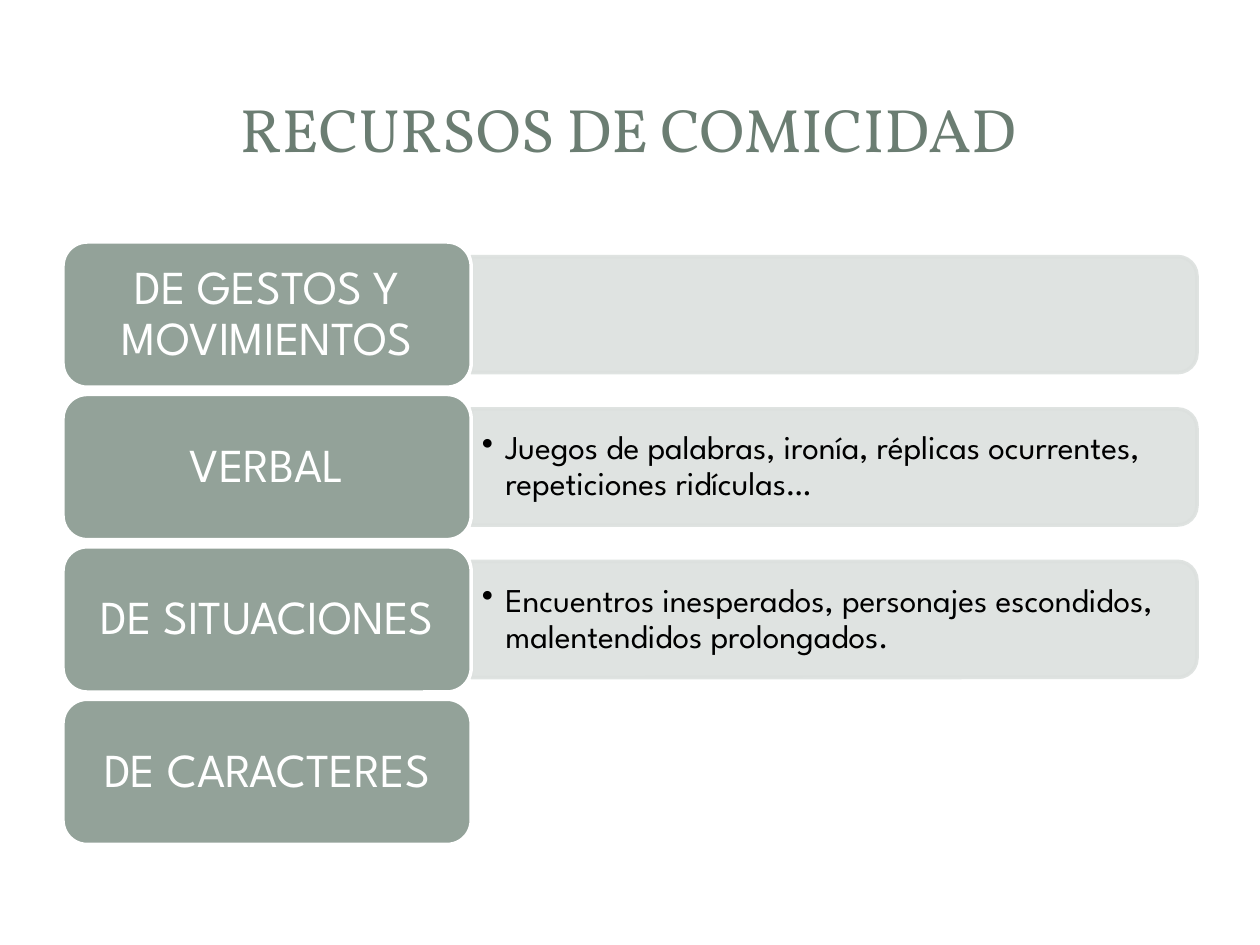
from lxml.etree import SubElement
from pptx import Presentation
from pptx.dml.color import RGBColor
from pptx.enum.shapes import MSO_SHAPE
from pptx.enum.text import MSO_ANCHOR, PP_ALIGN
from pptx.oxml.ns import qn
from pptx.util import Pt

TITLE = "RECURSOS DE COMICIDAD"
RESOURCES = [
    ("DE GESTOS Y MOVIMIENTOS", ""),
    ("VERBAL", "Juegos de palabras, ironía, réplicas ocurrentes, repeticiones ridículas…"),
    ("DE SITUACIONES", "Encuentros inesperados, personajes escondidos, malentendidos prolongados."),
    ("DE CARACTERES", None),
]

WHITE = RGBColor(0xFF, 0xFF, 0xFF)
BLACK = RGBColor(0, 0, 0)
SAGE = RGBColor(0x93, 0xA2, 0x99)
DARK_SAGE = RGBColor(0x6B, 0x7D, 0x72)
PALE = RGBColor(0xDC, 0xE0, 0xDE)

LEFT, TOP, PITCH = 36, 138.3, 87.1
LABEL_WIDTH, LABEL_HEIGHT = 233.3, 83
PANEL_WIDTH, PANEL_HEIGHT = 414.7, 66.4
DETAIL_WIDTH, DETAIL_HEIGHT = 411.5, 60
PANEL_LEFT = LEFT + LABEL_WIDTH

TITLE_FONT = {"name": "Vollkorn", "size": Pt(35)}
LABEL_FONT = {"name": "League Spartan", "size": Pt(27)}
DETAIL_FONT = {"name": "League Spartan", "size": Pt(19)}
LABEL_FRAME = {"margin_left": Pt(12), "margin_right": Pt(12),
               "margin_top": Pt(8), "margin_bottom": Pt(8)}
DETAIL_FRAME = {"margin_left": Pt(6), "margin_right": Pt(6),
                "margin_top": Pt(3), "margin_bottom": Pt(3)}


def assign(target, values):
    for key, value in values.items():
        setattr(target, key, value)


def write(shape, text, font, color, align, frame, spacing=0.9):
    assign(shape.text_frame, {"text": text, "word_wrap": True,
                              "vertical_anchor": MSO_ANCHOR.MIDDLE, **frame})
    paragraph = shape.text_frame.paragraphs[0]
    assign(paragraph, {"alignment": align, "line_spacing": spacing})
    assign(paragraph.runs[0].font, font)
    paragraph.runs[0].font.color.rgb = color
    return paragraph


def add_box(slide, kind, left, top, width, height, fill, line):
    box = slide.shapes.add_shape(kind, Pt(left), Pt(top), Pt(width), Pt(height))
    box.shadow.inherit = False
    box.fill.solid()
    box.fill.fore_color.rgb = fill
    box.line.color.rgb = line
    box.line.width = Pt(2)
    return box


def add_panel(slide, middle):
    panel = add_box(slide, MSO_SHAPE.ROUND_2_SAME_RECTANGLE,
                    PANEL_LEFT + (PANEL_WIDTH - PANEL_HEIGHT) / 2,
                    middle - PANEL_WIDTH / 2, PANEL_HEIGHT, PANEL_WIDTH, PALE, PALE)
    panel.rotation = 90
    for color in panel._element.spPr.iter(qn("a:srgbClr")):
        SubElement(color, qn("a:alpha"), val="90000")


def add_detail(slide, text, middle):
    detail = slide.shapes.add_textbox(Pt(PANEL_LEFT), Pt(middle - DETAIL_HEIGHT / 2),
                                      Pt(DETAIL_WIDTH), Pt(DETAIL_HEIGHT))
    paragraph = write(detail, text, DETAIL_FONT, BLACK, PP_ALIGN.LEFT, DETAIL_FRAME)
    properties = paragraph._p.get_or_add_pPr()
    properties.set("marL", str(Pt(13.5)))
    properties.set("indent", str(Pt(-13.5)))
    SubElement(properties, qn("a:buChar"), char="•")


def main():
    deck = Presentation()
    assign(deck, {"slide_width": Pt(720), "slide_height": Pt(540)})
    slide = deck.slides.add_slide(deck.slide_layouts[5])
    heading = slide.shapes.title
    assign(heading, {"left": Pt(34), "top": Pt(32.4), "width": Pt(650), "height": Pt(82)})
    write(heading, TITLE, TITLE_FONT, DARK_SAGE, PP_ALIGN.CENTER, {}, 1.0)

    for row, (name, detail) in enumerate(RESOURCES):
        top = TOP + row * PITCH
        middle = top + LABEL_HEIGHT / 2
        if detail is not None:
            add_panel(slide, middle)
        if detail:
            add_detail(slide, detail, middle)
        label = add_box(slide, MSO_SHAPE.ROUNDED_RECTANGLE, LEFT, top,
                        LABEL_WIDTH, LABEL_HEIGHT, SAGE, WHITE)
        write(label, name, LABEL_FONT, WHITE, PP_ALIGN.CENTER, LABEL_FRAME)
    deck.save("out.pptx")


if __name__ == "__main__":
    main()
